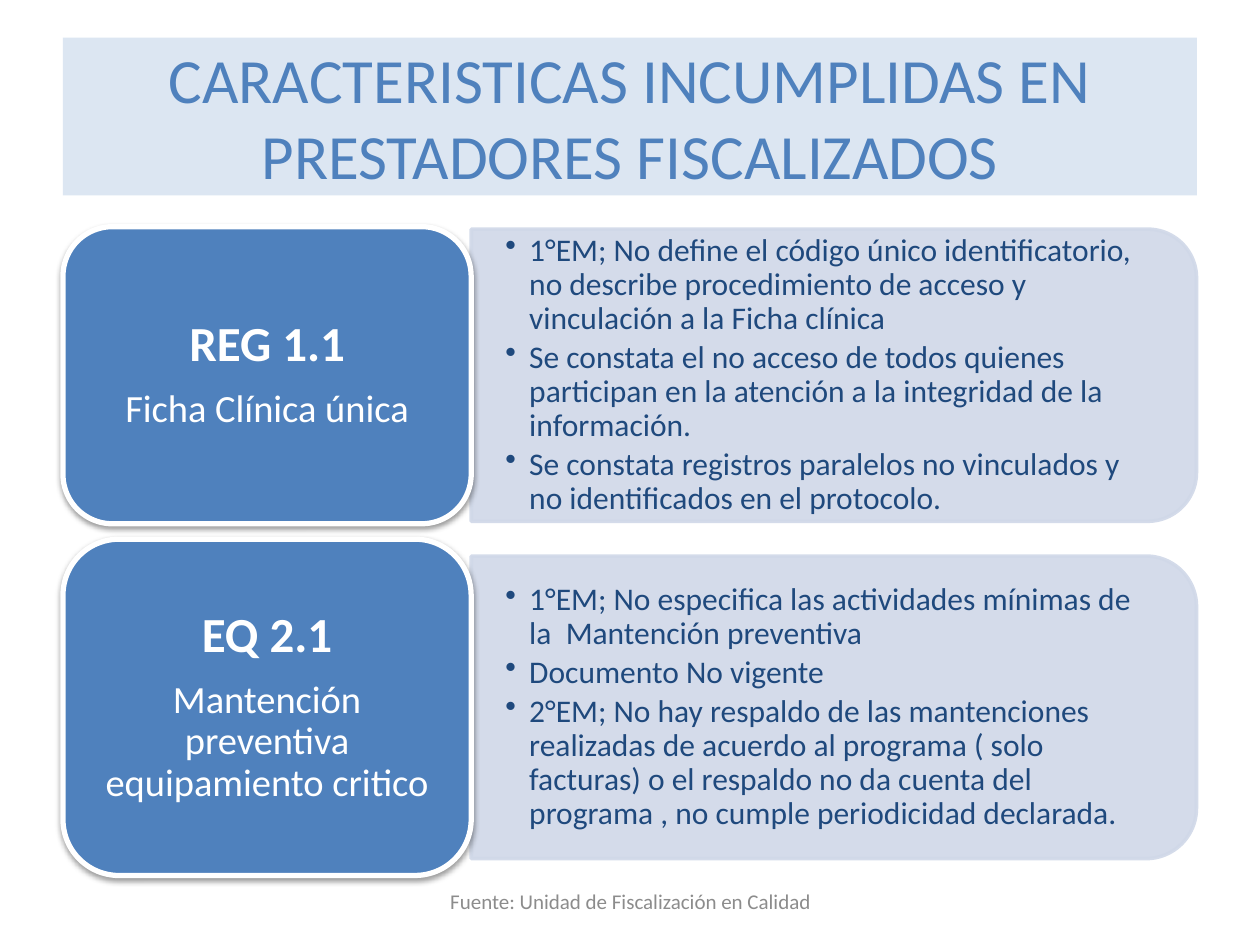
from dataclasses import dataclass

from lxml import etree
from pptx import Presentation
from pptx.dml.color import RGBColor
from pptx.enum.shapes import MSO_SHAPE
from pptx.enum.text import MSO_ANCHOR, PP_ALIGN
from pptx.oxml.ns import qn
from pptx.util import Cm, Pt

RECTANGLE = MSO_SHAPE.RECTANGLE
ROUNDED = MSO_SHAPE.ROUNDED_RECTANGLE
ROUNDED_TOP = MSO_SHAPE.ROUND_2_SAME_RECTANGLE
MIDDLE = MSO_ANCHOR.MIDDLE
CENTER = PP_ALIGN.CENTER
LEFT = PP_ALIGN.LEFT


@dataclass(frozen=True)
class Theme:
    font: str = "Calibri"
    blue: str = "4F81BD"
    navy: str = "1F497D"
    panel: str = "D0D8E8"
    banner: str = "DCE6F2"
    white: str = "FFFFFF"
    gray: str = "8C8C8C"
    title_size: int = 36
    code_size: int = 28
    name_size: int = 22
    body_size: int = 18
    source_size: int = 12


theme = Theme()


def add_block(kind, left, top, width, height, fill, line=None, line_width=0):
    shape = slide.shapes.add_shape(kind, Cm(left), Cm(top), Cm(width), Cm(height))
    shape.shadow.inherit = False
    shape.fill.solid()
    shape.fill.fore_color.rgb = RGBColor.from_string(fill)
    if line:
        shape.line.color.rgb = RGBColor.from_string(line)
        shape.line.width = Pt(line_width)
    else:
        shape.line.fill.background()
    return shape


def write_text(shape, lines, color, alignment=CENTER, insets=(0.25, 0.13),
               spacing=None, space_after=0):
    """Fill a shape with (text, size, bold) lines; space_after is a share of the size."""
    frame = shape.text_frame
    frame.word_wrap = True
    frame.vertical_anchor = MIDDLE
    frame.margin_left = frame.margin_right = Cm(insets[0])
    frame.margin_top = frame.margin_bottom = Cm(insets[1])
    frame.text = "\n".join(text for text, size, bold in lines)
    for paragraph, (text, size, bold) in zip(frame.paragraphs, lines):
        paragraph.alignment = alignment
        paragraph.line_spacing = spacing
        paragraph.space_after = Pt(size * space_after)
        font = paragraph.runs[0].font
        font.name = theme.font
        font.size = Pt(size)
        font.bold = bold
        font.color.rgb = RGBColor.from_string(color)


presentation = Presentation()
presentation.slide_width = Cm(25.4)
presentation.slide_height = Cm(19.05)
slide = presentation.slides.add_slide(presentation.slide_layouts[6])

# Rows: code, name, card top and height, panel top and height, findings
rows = [
    ("REG 1.1", "Ficha Clínica única", 4.57, 5.99, 4.62, 5.89, [
        "1°EM; No define el código único identificatorio, no describe "
        "procedimiento de acceso y vinculación a la Ficha clínica",
        "Se constata el no acceso de todos quienes participan en la atención "
        "a la integridad de la información.",
        "Se constata registros paralelos no vinculados y no identificados "
        "en el protocolo.",
    ]),
    ("EQ 2.1", "Mantención preventiva equipamiento critico", 10.87, 6.78, 11.21, 6.1, [
        "1°EM; No especifica las actividades mínimas de la  Mantención preventiva",
        "Documento No vigente",
        "2°EM; No hay respaldo de las mantenciones realizadas de acuerdo al "
        "programa ( solo facturas) o el respaldo no da cuenta del programa , "
        "no cumple periodicidad declarada.",
    ]),
]
card_left, card_width = 1.27, 8.23
panel_left, panel_width = card_left + card_width, 14.62
card_inset, panel_inset = 0.31, 0.28

for code, name, card_top, card_height, panel_top, panel_height, findings in rows:
    # Panel: turned a quarter so that its round corners face right
    turn_shift = (panel_width - panel_height) / 2
    panel = add_block(ROUNDED_TOP, panel_left + turn_shift, panel_top - turn_shift,
                      panel_height, panel_width, theme.panel, theme.panel, 2)
    panel.rotation = 90
    for color in panel._element.spPr.iter(qn("a:srgbClr")):
        etree.SubElement(color, qn("a:alpha"), val="90000")

    # Bulleted findings
    box = slide.shapes.add_textbox(
        Cm(panel_left), Cm(panel_top + panel_inset),
        Cm(panel_width - panel_inset), Cm(panel_height - 2 * panel_inset))
    write_text(box, [(finding, theme.body_size, False) for finding in findings],
               theme.navy, LEFT, (0.69, 0.36), 0.9, 0.15)
    for paragraph in box.text_frame.paragraphs:
        properties = paragraph._p.get_or_add_pPr()
        properties.set("marL", str(Cm(0.48)))
        properties.set("indent", str(-Cm(0.48)))
        etree.SubElement(properties, qn("a:buChar"), char="•")

    # Card with a soft shadow below
    card = add_block(ROUNDED, card_left, card_top, card_width, card_height,
                     theme.blue, theme.white, 3)
    effects = card._element.spPr.find(qn("a:effectLst"))
    shadow = etree.SubElement(effects, qn("a:outerShdw"), blurRad=str(Pt(3.1)),
                              dist=str(Pt(1.6)), dir="5400000", rotWithShape="0")
    shadow_color = etree.SubElement(shadow, qn("a:srgbClr"), val="000000")
    etree.SubElement(shadow_color, qn("a:alpha"), val="38000")

    # Code and name on the card
    label = slide.shapes.add_textbox(
        Cm(card_left + card_inset), Cm(card_top + card_inset),
        Cm(card_width - 2 * card_inset), Cm(card_height - 2 * card_inset))
    write_text(label, [(code, theme.code_size, True), (name, theme.name_size, False)],
               theme.white, CENTER, (0.3, 0.15), 0.9, 0.35)

# Source line
source = slide.shapes.add_textbox(Cm(8.69), Cm(17.65), Cm(8.05), Cm(1.02))
write_text(source, [("Fuente: Unidad de Fiscalización en Calidad",
                     theme.source_size, False)], theme.gray)

# Title banner
title = add_block(RECTANGLE, 1.27, 0.76, 22.86, 3.18, theme.banner)
write_text(title, [("CARACTERISTICAS INCUMPLIDAS EN PRESTADORES FISCALIZADOS",
                    theme.title_size, False)], theme.blue)

presentation.save("out.pptx")
